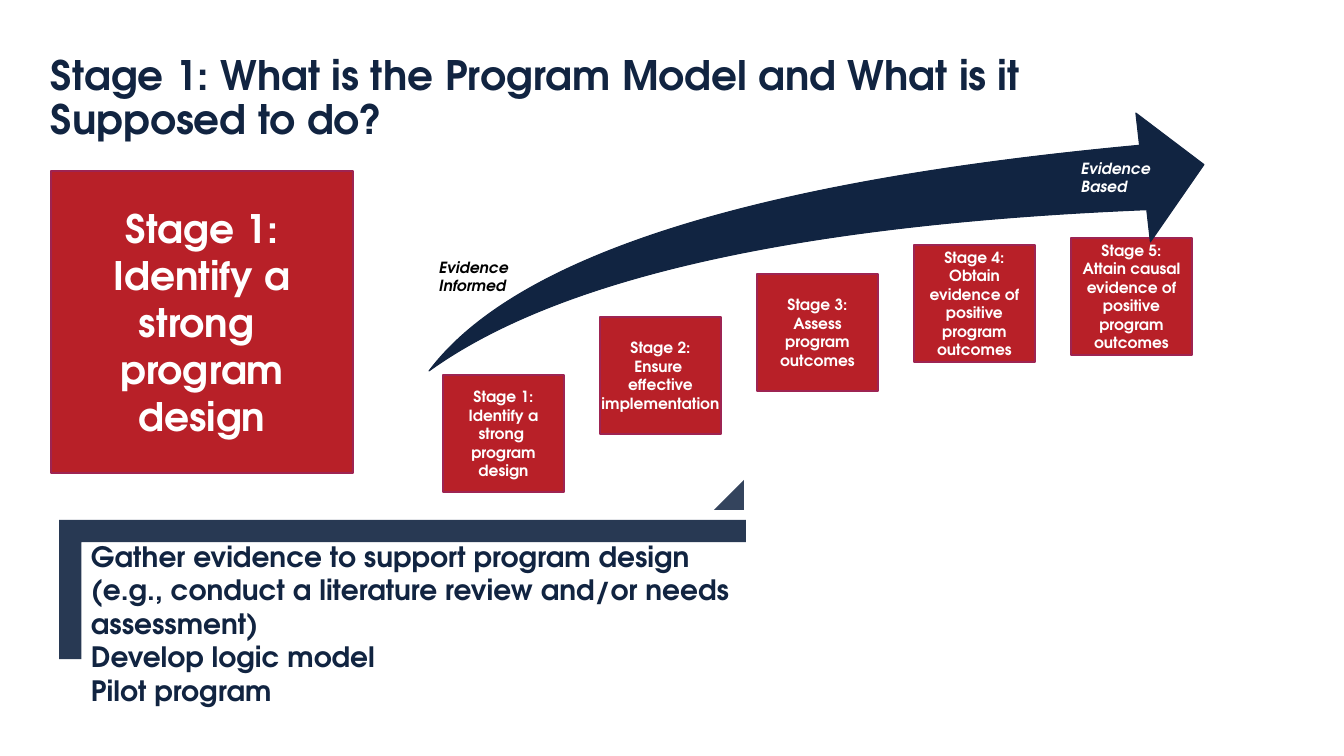
"""Builds the Stage 1 program model slide with its five-stage evidence arrow."""
from lxml.etree import SubElement
from pptx import Presentation
from pptx.dml.color import RGBColor
from pptx.enum.shapes import MSO_SHAPE
from pptx.enum.text import MSO_ANCHOR, MSO_AUTO_SIZE, PP_ALIGN
from pptx.oxml.ns import qn
from pptx.util import Pt

COLORS = {"navy": "112441", "red": "B82028", "plum": "9E2452", "white": "FFFFFF", "black": "000000"}
FONT = "TeX Gyre Adventor"
SCALE = 914400 / 100.8
SLIDE_SIZE = (1344, 756)

TITLE = "Stage 1: What is the Program Model and What is it Supposed to do?"
TITLE_AREA = (51, 62, 1124, 81)
TASKS = [
    "Gather evidence to support program design (e.g., conduct a literature review and/or needs assessment)",
    "Develop logic model",
    "Pilot program",
]
TASKS_AREA = (51, 534, 716, 179)
TASK_INDENT = 30

FOCUS = "Stage 1:\vIdentify a\vstrong \vprogram\vdesign"
FOCUS_AREA = (51, 171, 302, 302)
STAGES = [
    ("Stage 1:\vIdentify a strong \vprogram design", 375, 10),
    ("Stage 2:\vEnsure \veffective implementation", 317, 0),
    ("Stage 3:\vAssess program outcomes", 274, 10),
    ("Stage 4:\vObtain evidence of positive program outcomes", 245, 10),
    ("Stage 5:\vAttain causal evidence of positive program outcomes", 238, 10),
]
STAGE_LEFT, STAGE_STEP, STAGE_WIDTH, STAGE_HEIGHT = 443, 157, 121, 117
ARROW_AREA = (429, 113, 775, 258)
LABELS = [
    ("Evidence Informed", (429, 253, 116, 47), "black"),
    ("Evidence Based", (1071, 154, 120, 47), "white"),
]
CORNER_AREA = (333, 246, 139, 687)
TRIANGLE_AREA = (714, 480, 30, 30)


def emu(pixels):
    return round(pixels * SCALE)


def place(shape, area):
    for name, value in zip(("left", "top", "width", "height"), area):
        setattr(shape, name, emu(value))


def write(frame, lines, size, color, align=PP_ALIGN.LEFT, anchor=MSO_ANCHOR.TOP,
          side=10, edge=5, italic=False, spacing=1.0, indent=None):
    settings = {"word_wrap": True, "auto_size": MSO_AUTO_SIZE.NONE, "vertical_anchor": anchor,
                "margin_left": emu(side), "margin_right": emu(side),
                "margin_top": emu(edge), "margin_bottom": emu(edge)}
    for name, value in settings.items():
        setattr(frame, name, value)
    frame.text = "\n".join(lines)
    layout = {"alignment": align, "line_spacing": spacing, "space_before": Pt(0), "space_after": Pt(0)}
    style = {"name": FONT, "size": Pt(size), "bold": True, "italic": italic}
    for para in frame.paragraphs:
        for name, value in layout.items():
            setattr(para, name, value)
        if indent is not None:
            properties = para._p.get_or_add_pPr()
            properties.set("marL", str(emu(indent)))
            properties.set("indent", "0")
            SubElement(properties, qn("a:buNone"))
        for span in para.runs:
            for name, value in style.items():
                setattr(span.font, name, value)
            span.font.color.rgb = RGBColor.from_string(COLORS[color])


def add_figure(page, preset, area, fill, line=None, line_width=1, adjustments=(), opacity=None):
    figure = page.shapes.add_shape(preset, *map(emu, area))
    figure.shadow.inherit = False
    figure.fill.solid()
    figure.fill.fore_color.rgb = RGBColor.from_string(COLORS[fill])
    if opacity:
        color = figure.fill._xPr.find(qn("a:solidFill"))[0]
        SubElement(color, qn("a:alpha"), val=str(opacity * 1000))
    if line:
        figure.line.color.rgb = RGBColor.from_string(COLORS[line])
        figure.line.width = Pt(line_width)
    else:
        figure.line.fill.background()
    for index, value in enumerate(adjustments):
        figure.adjustments[index] = value
    return figure


def add_stage(page, text, area, size, side=10):
    box = add_figure(page, MSO_SHAPE.RECTANGLE, area, "red", "plum")
    write(box.text_frame, [text], size, "white", PP_ALIGN.CENTER, MSO_ANCHOR.MIDDLE, side)


def main():
    deck = Presentation()
    deck.slide_width, deck.slide_height = map(emu, SLIDE_SIZE)
    page = deck.slides.add_slide(deck.slide_layouts[1])
    title, tasks = page.placeholders
    place(title, TITLE_AREA)
    write(title.text_frame, [TITLE], 29, "navy", anchor=MSO_ANCHOR.BOTTOM, side=0, edge=0, spacing=0.9)
    place(tasks, TASKS_AREA)
    write(tasks.text_frame, TASKS, 20, "navy", indent=TASK_INDENT)

    for index, (text, top, side) in enumerate(STAGES):
        left = STAGE_LEFT + index * STAGE_STEP
        add_stage(page, text, (left, top, STAGE_WIDTH, STAGE_HEIGHT), 11, side)
    add_figure(page, MSO_SHAPE.SWOOSH_ARROW, ARROW_AREA, "navy", "navy", 0.75, (0.25, 0.25))
    for text, area, color in LABELS:
        label = page.shapes.add_textbox(*map(emu, area))
        write(label.text_frame, [text], 11, color, italic=True)
    add_stage(page, FOCUS, FOCUS_AREA, 28)

    add_figure(page, MSO_SHAPE.ISOSCELES_TRIANGLE, TRIANGLE_AREA, "navy", adjustments=(1,), opacity=85)
    corner = add_figure(page, MSO_SHAPE.CORNER, CORNER_AREA, "navy", adjustments=(0.16, 0.16), opacity=90)
    corner.rotation = 90
    deck.save("out.pptx")


if __name__ == "__main__":
    main()
